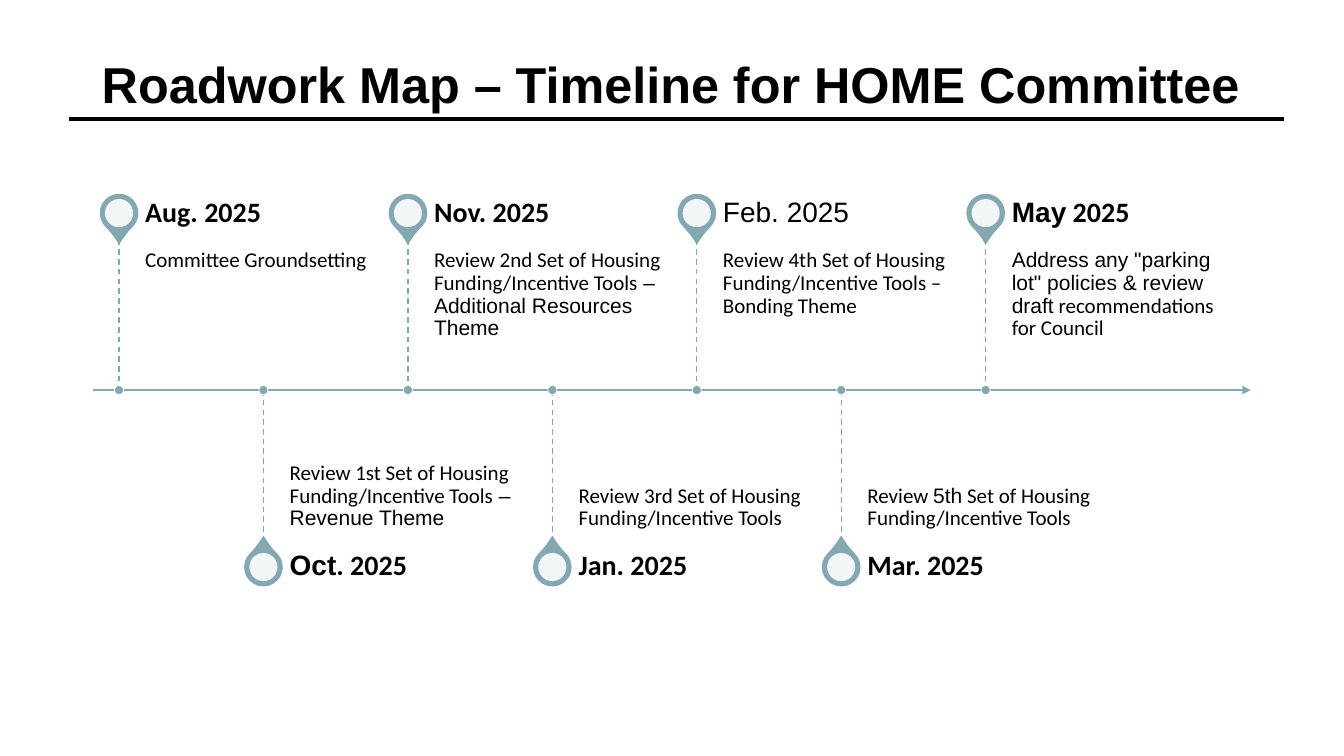
from dataclasses import dataclass

from lxml import etree
from pptx import Presentation
from pptx.dml.color import RGBColor
from pptx.enum.dml import MSO_LINE
from pptx.enum.shapes import MSO_CONNECTOR, MSO_SHAPE
from pptx.enum.text import MSO_ANCHOR, MSO_AUTO_SIZE, PP_ALIGN
from pptx.oxml.ns import qn
from pptx.shapes.autoshape import Shape
from pptx.shapes.connector import Connector
from pptx.shapes.shapetree import SlideShapes
from pptx.text.text import Font, TextFrame
from pptx.util import Cm, Pt

STRAIGHT = MSO_CONNECTOR.STRAIGHT
TEARDROP, OVAL = MSO_SHAPE.TEAR, MSO_SHAPE.OVAL
TOP, MIDDLE, BOTTOM = MSO_ANCHOR.TOP, MSO_ANCHOR.MIDDLE, MSO_ANCHOR.BOTTOM
LEFT, NO_AUTOFIT, DASH = PP_ALIGN.LEFT, MSO_AUTO_SIZE.NONE, MSO_LINE.DASH


@dataclass(frozen=True)
class Theme:
    ink: RGBColor = RGBColor(0x00, 0x00, 0x00)
    teal: RGBColor = RGBColor(0x83, 0xA8, 0xB0)
    white: RGBColor = RGBColor(0xFF, 0xFF, 0xFF)
    heading_font: str = "Arial"
    body_font: str = "Calibri"
    title_size: float = 36
    date_size: float = 20
    task_size: float = 15


THEME = Theme()
HEADING, BODY = THEME.heading_font, THEME.body_font
Pieces = tuple[tuple[str, str], ...]  # (text, font name)


@dataclass(frozen=True)
class Milestone:
    date: Pieces
    task: Pieces
    bold_date: bool = True


MILESTONES = (
    Milestone((("Aug. 2025", BODY),), (("Committee Groundsetting", BODY),)),
    Milestone((("Oct", HEADING), (". 2025", BODY)),
              (("Review 1st Set of Housing Funding/Incentive Tools", BODY),
               (" – Revenue Theme", HEADING))),
    Milestone((("Nov. 2025", BODY),),
              (("Review 2nd Set of Housing Funding/Incentive Tools", BODY),
               (" – Additional Resources Theme", HEADING))),
    Milestone((("Jan. 2025", BODY),),
              (("Review 3rd Set of Housing Funding/Incentive Tools", BODY),)),
    Milestone((("Feb. 2025", HEADING),),
              (("Review 4th Set of Housing Funding/Incentive Tools – Bonding Theme", BODY),),
              bold_date=False),
    Milestone((("Mar. 2025", BODY),),
              (("Review ", BODY), ("5th", HEADING),
               (" Set of Housing Funding/Incentive Tools", BODY))),
    Milestone((("May", HEADING), (" 2025", BODY)),
              (('Address any "parking lot" policies & review draft', HEADING),
               (" recommendations for Council", BODY))),
)

# Timeline geometry in centimetres
AXIS_Y = 9.83
FIRST_X, PITCH = 3.0, 3.64
STEM = 3.79
PIN_OFFSET = 4.46
PIN_SIZE, HOLE_SIZE, DOT_SIZE = 0.94, 0.71, 0.23
TEXT_GAP, TEXT_WIDTH, DATE_HEIGHT = 0.66, 6.0, 1.33


def style_font(font: Font, name: str, size: float, bold: bool) -> None:
    font.name, font.size, font.bold = name, Pt(size), bold
    font.color.rgb = THEME.ink


def set_frame(frame: TextFrame, anchor: MSO_ANCHOR) -> None:
    frame.word_wrap = True
    frame.auto_size = NO_AUTOFIT
    frame.vertical_anchor = anchor
    frame.paragraphs[0].alignment = LEFT
    frame.paragraphs[0].line_spacing = 0.9


def add_line(shapes: SlideShapes, start: tuple[float, float], end: tuple[float, float],
             color: RGBColor, width: float) -> Connector:
    line = shapes.add_connector(STRAIGHT, *(Cm(value) for value in start + end))
    line.line.color.rgb = color
    line.line.width = Pt(width)
    etree.SubElement(line._element.spPr, qn("a:effectLst"))
    return line


def add_round(shapes: SlideShapes, kind: MSO_SHAPE, center: tuple[float, float],
              size: float, fill: RGBColor) -> Shape:
    x, y = center
    shape = shapes.add_shape(kind, Cm(x - size / 2), Cm(y - size / 2), Cm(size), Cm(size))
    shape.shadow.inherit = False
    shape.fill.solid()
    shape.fill.fore_color.rgb = fill
    return shape


def add_label(shapes: SlideShapes, box: tuple[float, float, float, float], pieces: Pieces,
              size: float, bold: bool, anchor: MSO_ANCHOR,
              insets: tuple[float, float, float]) -> None:
    frame = shapes.add_textbox(*(Cm(value) for value in box)).text_frame
    set_frame(frame, anchor)
    frame.margin_left = 0
    frame.margin_top, frame.margin_right, frame.margin_bottom = (Cm(v) for v in insets)
    for text, font_name in pieces:
        run = frame.paragraphs[0].add_run()
        run.text = text
        style_font(run.font, font_name, size, bold)


def add_milestone(shapes: SlideShapes, milestone: Milestone, x: float, above: bool) -> None:
    side = -1 if above else 1
    tip_y = AXIS_Y + side * STEM
    pin_center = (x, AXIS_Y + side * PIN_OFFSET)

    # Pin with a translucent hole
    pin = add_round(shapes, TEARDROP, pin_center, PIN_SIZE, THEME.teal)
    pin.adjustments[0] = 1.15
    pin.rotation = 135 if above else 315
    pin.line.color.rgb = THEME.teal
    pin.line.width = Pt(1)
    hole = add_round(shapes, OVAL, pin_center, HOLE_SIZE, THEME.white)
    hole.line.fill.background()
    hole_color = hole._element.spPr.find(qn("a:solidFill"))[0]
    etree.SubElement(hole_color, qn("a:alpha"), val="90000")

    # Task and date
    text_x = x + TEXT_GAP
    add_label(shapes, (text_x, min(tip_y, AXIS_Y), TEXT_WIDTH, STEM), milestone.task,
              THEME.task_size, False, TOP if above else BOTTOM,
              (0.25, 0.25, 0.41) if above else (0.41, 0, 0.25))
    date_y = tip_y - DATE_HEIGHT if above else tip_y
    add_label(shapes, (text_x, date_y, TEXT_WIDTH, DATE_HEIGHT), milestone.date,
              THEME.date_size, milestone.bold_date, MIDDLE, (0, 0.36, 0))

    # Stem and axis dot
    stem = add_line(shapes, (x, min(tip_y, AXIS_Y)), (x, max(tip_y, AXIS_Y)), THEME.teal, 1)
    stem.line.dash_style = DASH
    dot = add_round(shapes, OVAL, (x, AXIS_Y), DOT_SIZE, THEME.teal)
    dot.line.color.rgb = THEME.white
    dot.line.width = Pt(0.5)


def main() -> None:
    deck = Presentation()
    deck.slide_width, deck.slide_height = Cm(33.87), Cm(19.05)
    slide = deck.slides.add_slide(deck.slide_layouts[5])
    shapes = slide.shapes

    # Title and rule
    title = shapes.title
    title.left, title.top, title.width, title.height = Cm(2.31), Cm(1.37), Cm(29.21), Cm(1.65)
    title.text_frame.text = "Roadwork Map – Timeline for HOME Committee"
    set_frame(title.text_frame, BOTTOM)
    style_font(title.text_frame.paragraphs[0].runs[0].font, HEADING, THEME.title_size, True)
    add_line(shapes, (1.75, 3.0), (32.36, 3.0), THEME.ink, 3)

    # Time axis
    axis = add_line(shapes, (2.34, AXIS_Y), (31.52, AXIS_Y), THEME.teal, 1.5)
    etree.SubElement(axis.line._get_or_add_ln(), qn("a:tailEnd"), type="triangle")

    # Milestones alternate above and below the axis
    for index, milestone in enumerate(MILESTONES):
        add_milestone(shapes, milestone, FIRST_X + index * PITCH, index % 2 == 0)

    deck.save("out.pptx")


if __name__ == "__main__":
    main()
